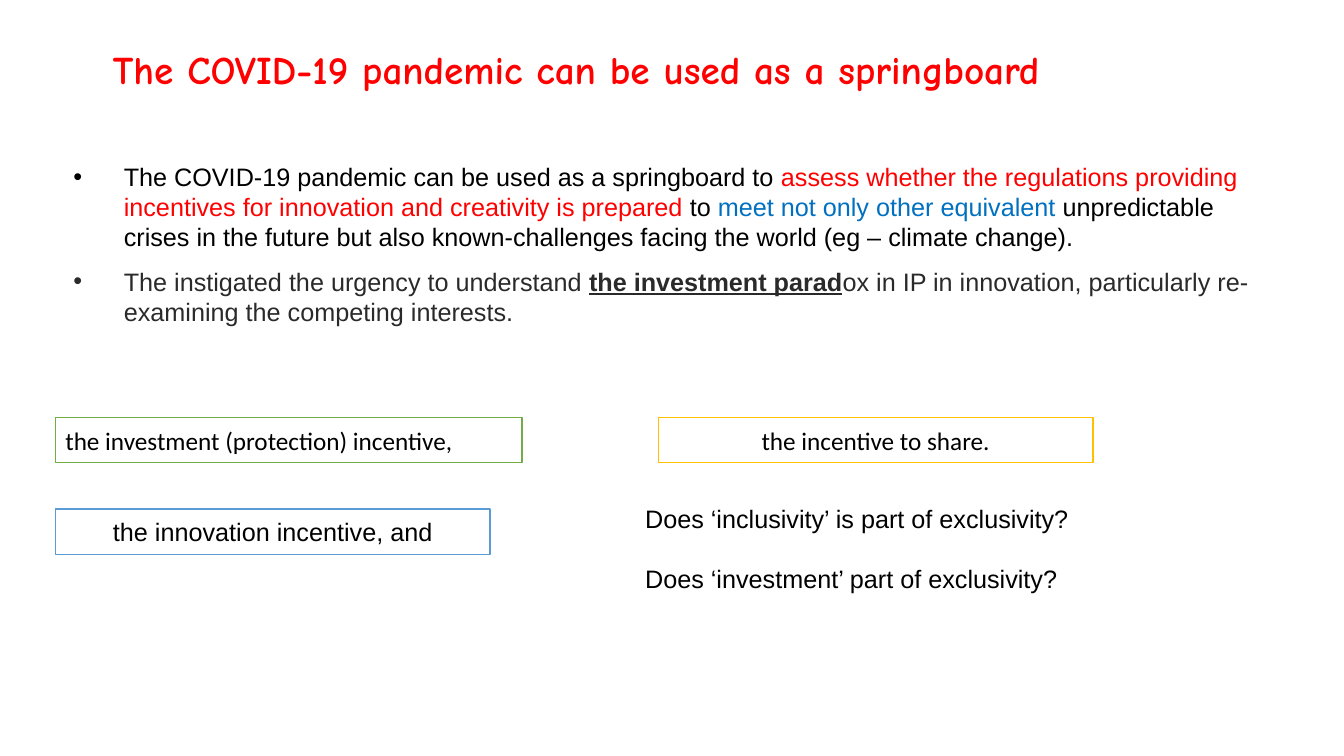
"""Build the slide on the COVID-19 pandemic as a springboard for IP incentives."""
import pptx
import pptx.util
import pptx.dml.color
import pptx.enum.shapes
import pptx.enum.text
from lxml import etree

Inches = pptx.util.Inches
Pt = pptx.util.Pt
ANCHOR = pptx.enum.text.MSO_ANCHOR
ALIGN = pptx.enum.text.PP_ALIGN
COLORS = {
    "black": "000000", "white": "FFFFFF", "red": "FF0000", "blue": "0070C0",
    "charcoal": "2A2A2A", "green": "70AD47", "sky": "5B9BD5", "gold": "FFC000",
}


def rgb(name):
    return pptx.dml.color.RGBColor.from_string(COLORS[name])


def add_span(para, text, color="black", font="Arial", size=18, bold=False, underline=False):
    span = para.add_run()
    span.text = text
    span.font.name = font
    span.font.size = Pt(size)
    span.font.bold = bold
    span.font.underline = underline
    span.font.color.rgb = rgb(color)


deck = pptx.Presentation()
deck.slide_width = Inches(13.33)
deck.slide_height = Inches(7.5)
page = deck.slides.add_slide(deck.slide_layouts[5])

title = page.shapes.title
title.left, title.top = Inches(1.02), Inches(0.45)
title.width, title.height = Inches(11.49), Inches(0.74)
title.text_frame.word_wrap = True
title.text_frame.auto_size = pptx.enum.text.MSO_AUTO_SIZE.NONE
title.text_frame.vertical_anchor = ANCHOR.TOP
para = title.text_frame.paragraphs[0]
para.alignment = ALIGN.LEFT
para.line_spacing = 0.9
add_span(para, "The COVID-19 pandemic can be used as a springboard", "red", "Comic Neue", 28, True)

bullets = [
    [
        ("The COVID-19 pandemic can be used as a springboard to ", "black", False),
        ("assess whether the regulations providing incentives for innovation and creativity is prepared ", "red", False),
        ("to ", "black", False),
        ("meet not only other equivalent ", "blue", False),
        ("unpredictable crises in the future but also known-challenges facing the world "
         "(eg – climate change).", "black", False),
    ],
    [
        ("The instigated the urgency to understand ", "charcoal", False),
        ("the investment parad", "charcoal", True),
        ("ox in IP in innovation, particularly re-examining the competing interests.", "charcoal", False),
    ],
]
body = page.shapes.add_textbox(Inches(0.63), Inches(1.55), Inches(12.03), Inches(3.51)).text_frame
body.word_wrap = True
for index, spans in enumerate(bullets):
    para = body.add_paragraph() if index else body.paragraphs[0]
    properties = para._p.get_or_add_pPr()
    properties.set("marL", str(Inches(0.5)))
    properties.set("indent", str(-Inches(0.5)))
    namespace = pptx.oxml.ns.nsdecls("a")
    properties.append(etree.fromstring(f'<a:buFont {namespace} typeface="Arial"/>'))
    properties.append(etree.fromstring(f'<a:buChar {namespace} char="•"/>'))
    if index:
        para.space_before = Pt(10)
    for text, color, emphasis in spans:
        add_span(para, text, color, bold=emphasis, underline=emphasis)

incentives = [
    ("the investment (protection) incentive,", 0.55, 4.14, 4.63, "green", "Calibri", ALIGN.LEFT),
    ("the innovation incentive, and", 0.55, 5.05, 4.31, "sky", "Arial", ALIGN.CENTER),
    ("the incentive to share.", 6.53, 4.14, 4.31, "gold", "Calibri", ALIGN.CENTER),
]
for text, left, top, width, outline, font, alignment in incentives:
    box = page.shapes.add_shape(
        pptx.enum.shapes.MSO_SHAPE.RECTANGLE, Inches(left), Inches(top), Inches(width), Inches(0.45))
    box.shadow.inherit = False
    box.fill.solid()
    box.fill.fore_color.rgb = rgb("white")
    box.line.color.rgb = rgb(outline)
    box.line.width = Pt(1)
    box.text_frame.word_wrap = True
    box.text_frame.vertical_anchor = ANCHOR.MIDDLE
    para = box.text_frame.paragraphs[0]
    para.alignment = alignment
    add_span(para, text, font=font)

questions = page.shapes.add_textbox(Inches(6.3), Inches(4.94), Inches(6.36), Inches(1.01)).text_frame
questions.word_wrap = True
for index, text in enumerate([
    "Does ‘inclusivity’ is part of exclusivity?",
    "Does ‘investment’ part of exclusivity?",
]):
    para = questions.add_paragraph() if index else questions.paragraphs[0]
    if index:
        para.space_before = Pt(21.5)
    add_span(para, text)

deck.save("out.pptx")
